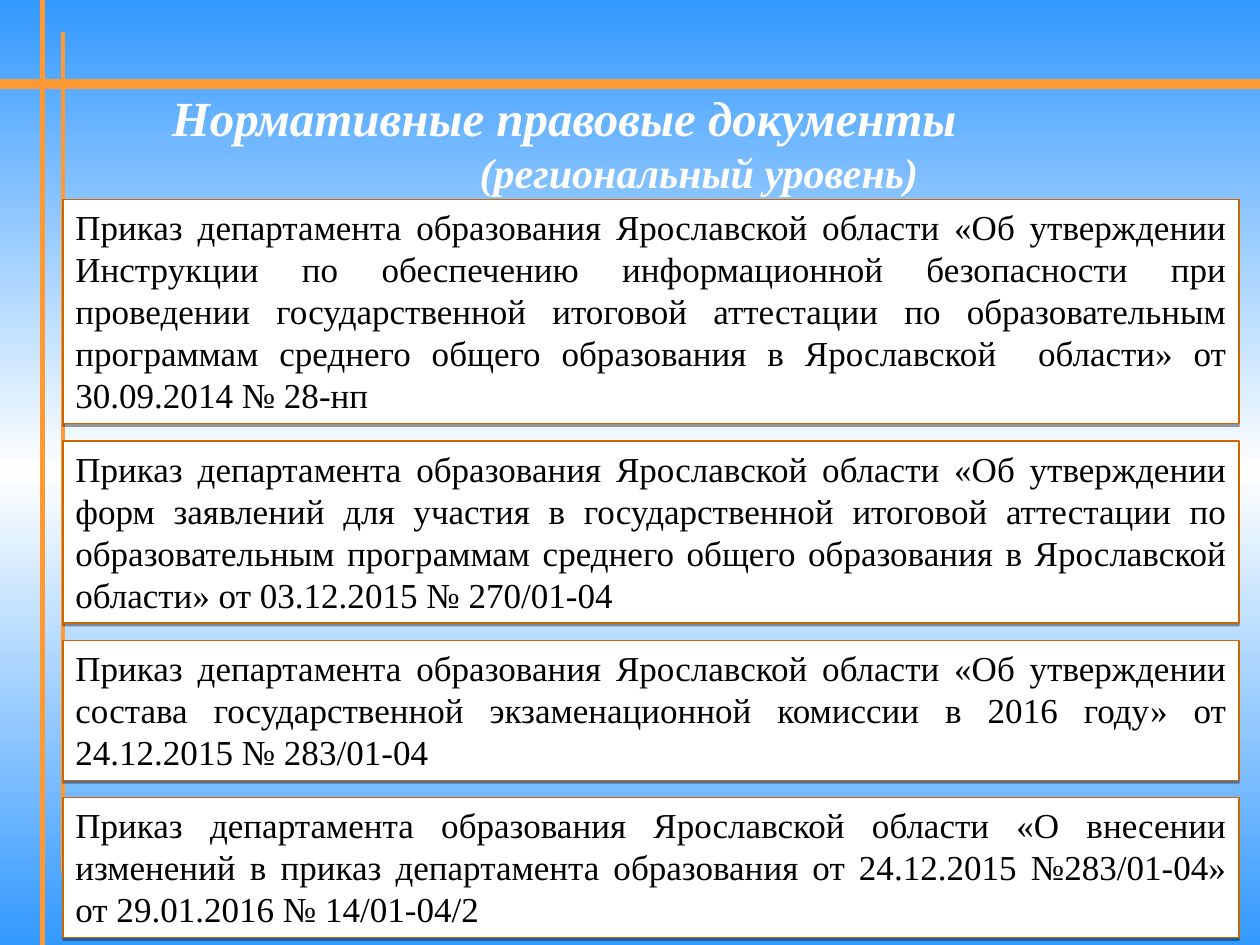
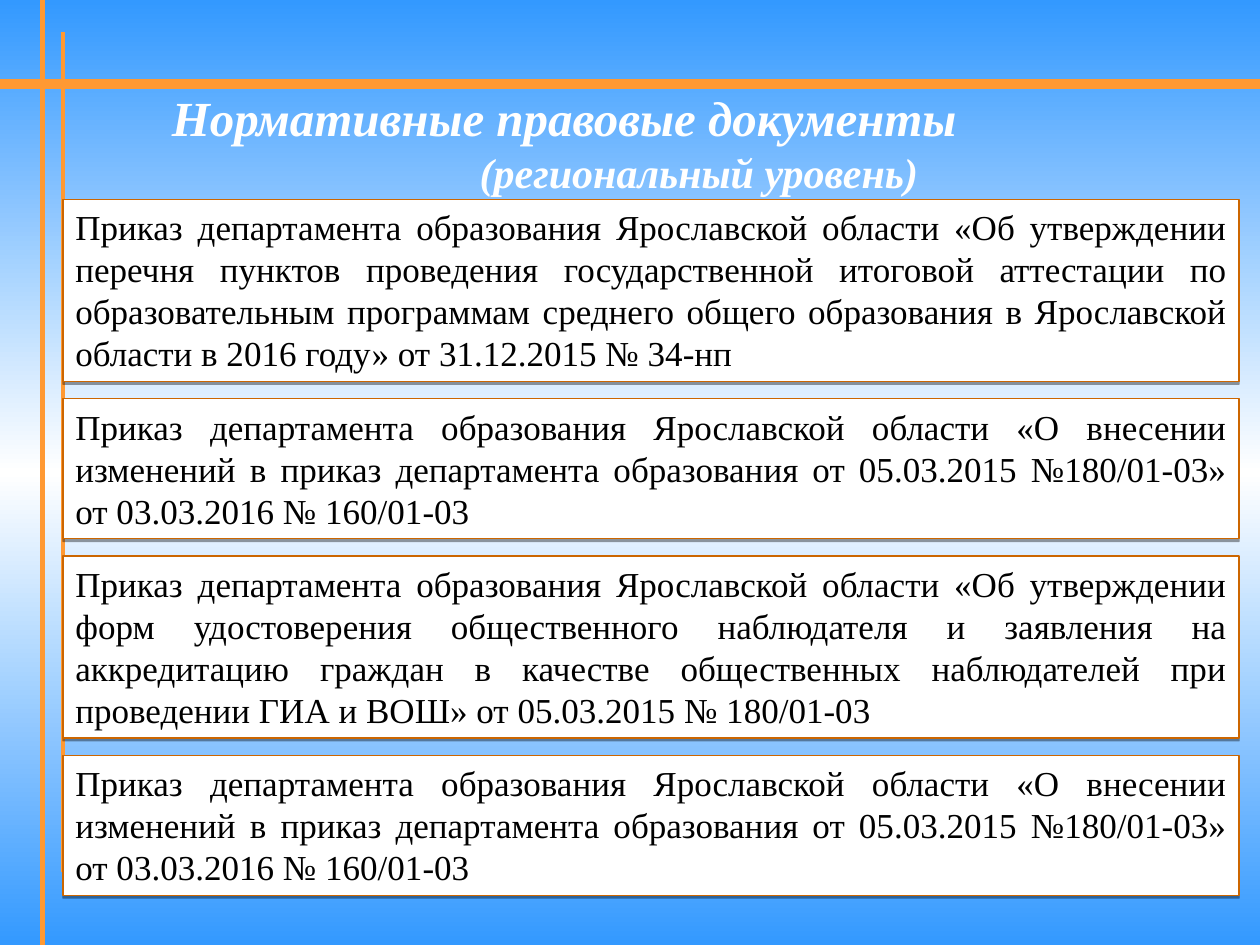
from copy import deepcopy

from lxml import etree
from pptx import Presentation
from pptx.dml.color import RGBColor
from pptx.enum.shapes import MSO_CONNECTOR, MSO_SHAPE
from pptx.enum.text import MSO_ANCHOR, MSO_AUTO_SIZE, PP_ALIGN
from pptx.oxml.ns import qn
from pptx.util import Cm, Pt

STRAIGHT = MSO_CONNECTOR.STRAIGHT
RECTANGLE = MSO_SHAPE.RECTANGLE
TOP, MIDDLE = MSO_ANCHOR.TOP, MSO_ANCHOR.MIDDLE
FIT_SHAPE, NO_FIT = MSO_AUTO_SIZE.SHAPE_TO_FIT_TEXT, MSO_AUTO_SIZE.NONE
LEFT, CENTER, JUSTIFY = PP_ALIGN.LEFT, PP_ALIGN.CENTER, PP_ALIGN.JUSTIFY

FONT = "Times New Roman"
BLUE, WHITE, BLACK = "3399FF", "FFFFFF", "000000"
ORANGE, BROWN = "FF9933", "CC6600"

TITLE = "Нормативные правовые документы"
SUBTITLE = "(региональный уровень)"
ORDER = "Приказ департамента образования Ярославской области "
AMENDMENT = (
    "«О внесении изменений в приказ департамента образования "
    "от 05.03.2015 №180/01-03» от 03.03.2016 № 160/01-03"
)

# Each order: number of text lines, wording after the common opening
SLIDES = [
    [
        (5, "«Об утверждении Инструкции по обеспечению информационной "
            "безопасности при проведении государственной итоговой аттестации "
            "по образовательным программам среднего общего образования "
            "в Ярославской  области» от 30.09.2014 № 28-нп"),
        (4, "«Об утверждении форм заявлений для участия в государственной "
            "итоговой аттестации по образовательным программам среднего "
            "общего образования в Ярославской области» "
            "от 03.12.2015 № 270/01-04"),
        (3, "«Об утверждении состава государственной экзаменационной "
            "комиссии в 2016 году» от 24.12.2015 № 283/01-04"),
        (3, "«О внесении изменений в приказ департамента образования "
            "от 24.12.2015 №283/01-04» от 29.01.2016 № 14/01-04/2"),
    ],
    [
        (4, "«Об утверждении перечня пунктов проведения государственной "
            "итоговой аттестации по образовательным программам среднего "
            "общего образования в Ярославской области в 2016 году» "
            "от 31.12.2015 № 34-нп"),
        (3, AMENDMENT),
        (4, "«Об утверждении форм удостоверения общественного наблюдателя "
            "и заявления на аккредитацию граждан в качестве общественных "
            "наблюдателей при проведении ГИА и ВОШ» "
            "от 05.03.2015 № 180/01-03"),
        (3, AMENDMENT),
    ],
]

RULES = [
    (0, 1.69, 25.4, 1.69, 6),
    (0.85, 0, 0.85, 19.05, 3),
    (1.27, 0.64, 1.27, 17.57, 2.25),
]
BOX_LEFT, BOX_TOP, BOX_WIDTH = 1.27, 4.02, 23.71
LINE_HEIGHT, BOX_PADDING, BOX_GAP = 0.85, 0.27, 0.35


def color(value):
    return RGBColor.from_string(value)


def style(paragraph, size, value, alignment, emphasis=False):
    paragraph.alignment = alignment
    for span in paragraph.runs:
        span.font.name = FONT
        span.font.size = Pt(size)
        span.font.color.rgb = color(value)
        span.font.bold = span.font.italic = emphasis


def paint_background(master):
    fill = master.background.fill
    fill.gradient()
    fill.gradient_angle = 270
    first, middle = fill.gradient_stops
    first.color.rgb = color(BLUE)
    first.position = 0
    middle.color.rgb = color(WHITE)
    middle.position = 0.5
    stops = master.element.xpath("./p:cSld/p:bg//a:gsLst")[0]
    last = deepcopy(stops[0])
    last.set("pos", "100000")
    stops.append(last)


def draw_rules(page, master):
    for x1, y1, x2, y2, width in RULES:
        rule = page.shapes.add_connector(STRAIGHT, Cm(x1), Cm(y1), Cm(x2), Cm(y2))
        rule.line.color.rgb = color(ORANGE)
        rule.line.width = Pt(width)
        etree.SubElement(rule.element.spPr, qn("a:effectLst"))
        master.shapes.element.append(rule.element)


def add_title(page):
    title = page.shapes.title
    title.left, title.top, title.width, title.height = (
        Cm(1.5), Cm(1.7), Cm(23.47), Cm(2.34))
    frame = title.text_frame
    frame.auto_size = NO_FIT
    frame.vertical_anchor = MIDDLE
    frame.text = f"{TITLE}\n{SUBTITLE}"
    heading, level = frame.paragraphs
    style(heading, 28, WHITE, LEFT, True)
    heading._p.get_or_add_pPr().set("marL", str(Cm(1.71)))
    style(level, 24, WHITE, CENTER, True)


def add_shadow(box):
    box.shadow.inherit = False
    effects = box.element.spPr.find(qn("a:effectLst"))
    shadow = etree.SubElement(effects, qn("a:outerShdw"), blurRad="0",
                              dist=str(Pt(1.6)), dir="5400000", rotWithShape="0")
    tint = etree.SubElement(shadow, qn("a:srgbClr"), val=BLACK)
    etree.SubElement(tint, qn("a:alpha"), val="38000")


def add_order(page, text, top, height):
    box = page.shapes.add_shape(
        RECTANGLE, Cm(BOX_LEFT), Cm(top), Cm(BOX_WIDTH), Cm(height))
    box.fill.solid()
    box.fill.fore_color.rgb = color(WHITE)
    box.line.color.rgb = color(BROWN)
    box.line.width = Pt(0.75)
    add_shadow(box)
    frame = box.text_frame
    frame.word_wrap = True
    frame.auto_size = FIT_SHAPE
    frame.vertical_anchor = TOP
    frame.text = ORDER + text
    style(frame.paragraphs[0], 20, BLACK, JUSTIFY)


def main():
    deck = Presentation()
    deck.slide_width, deck.slide_height = Cm(25.4), Cm(19.05)
    master = deck.slide_master
    paint_background(master)
    for number, orders in enumerate(SLIDES):
        page = deck.slides.add_slide(deck.slide_layouts.get_by_name("Title Only"))
        if number == 0:
            draw_rules(page, master)
        add_title(page)
        top = BOX_TOP
        for lines, text in orders:
            height = lines * LINE_HEIGHT + BOX_PADDING
            add_order(page, text, top, height)
            top += height + BOX_GAP
    deck.save("out.pptx")


if __name__ == "__main__":
    main()
